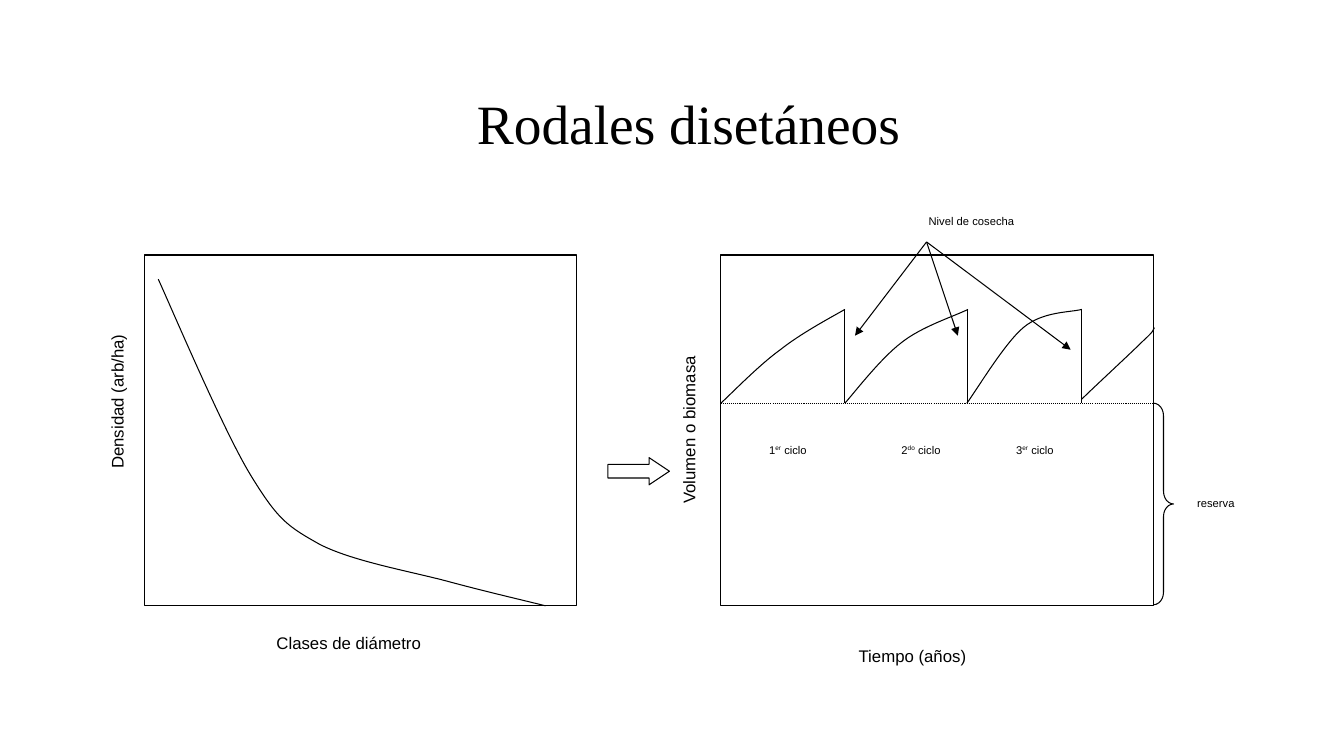
"""Build the slide on uneven-aged stands: diameter distribution and harvest cycles."""
from lxml import etree
from pptx import Presentation
from pptx import util as u
from pptx.dml.color import RGBColor
from pptx.enum import dml, shapes, text
from pptx.oxml.ns import qn

BLACK, WHITE = "000000", "FFFFFF"
PANEL_TOP, PANEL_WIDTH, PANEL_HEIGHT = 2.53, 4.29, 3.48
LEFT_PANEL, RIGHT_PANEL = 1.43, 7.15
PEAK, RESERVE = 3.07, 4.0


def draw_outline(shape, fill=None):
    """Give a shape or connector a thin black line and no shadow."""
    shape.line.color.rgb = RGBColor.from_string(BLACK)
    shape.line.width = u.Pt(0.75)
    if fill:
        shape.fill.solid()
        shape.fill.fore_color.rgb = RGBColor.from_string(fill)
    elif hasattr(shape, "fill"):
        shape.fill.background()
    etree.SubElement(shape._element.spPr, qn("a:effectLst"))
    return shape


def add_label(left, top, width, height, runs, size):
    """Add a centred label; each run is a pair of wording and baseline shift."""
    box = slide.shapes.add_textbox(
        u.Inches(left), u.Inches(top), u.Inches(width), u.Inches(height))
    frame = box.text_frame
    frame.word_wrap = False
    frame.auto_size = text.MSO_AUTO_SIZE.SHAPE_TO_FIT_TEXT
    frame.vertical_anchor = text.MSO_ANCHOR.MIDDLE
    paragraph = frame.paragraphs[0]
    paragraph.alignment = text.PP_ALIGN.CENTER
    for wording, baseline in runs:
        run = paragraph.add_run()
        run.text = wording
        run.font.size = u.Pt(size)
        run.font.name = "Arial"
        run.font.color.rgb = RGBColor.from_string(BLACK)
        if baseline:
            run.font._element.set("baseline", str(baseline))
    return box


presentation = Presentation()
presentation.slide_width = u.Inches(13.33)
presentation.slide_height = u.Inches(7.5)
slide = presentation.slides.add_slide(presentation.slide_layouts[5])

title = slide.shapes.title
title.left, title.top = u.Inches(1.08), u.Inches(0.87)
title.width, title.height = u.Inches(11.5), u.Inches(0.85)
title.text_frame.margin_bottom = u.Inches(0.13)
title.text_frame.vertical_anchor = text.MSO_ANCHOR.MIDDLE
paragraph = title.text_frame.paragraphs[0]
paragraph.alignment = text.PP_ALIGN.CENTER
paragraph.line_spacing = 0.9
run = paragraph.add_run()
run.text = "Rodales disetáneos"
run.font.size = u.Pt(39.6)
run.font.name = "Times New Roman"
run.font.color.rgb = RGBColor.from_string(BLACK)

for panel_left in (RIGHT_PANEL, LEFT_PANEL):
    draw_outline(slide.shapes.add_shape(
        shapes.MSO_SHAPE.RECTANGLE, u.Inches(panel_left), u.Inches(PANEL_TOP),
        u.Inches(PANEL_WIDTH), u.Inches(PANEL_HEIGHT)), WHITE)

density_curve = [
    (1.57, 2.77), (1.72, 3.1), (2.22, 4.28), (2.49, 4.72), (2.76, 5.16), (2.85, 5.22),
    (3.17, 5.4), (3.5, 5.57), (4.08, 5.67), (4.45, 5.77), (4.82, 5.87), (5.21, 5.96),
    (5.41, 6.01)]
growth_curves = [
    [(7.15, RESERVE), (7.25, 3.91), (7.53, 3.62), (7.74, 3.47), (7.94, 3.31),
     (8.24, 3.15), (8.38, PEAK)],
    [(8.38, RESERVE), (8.47, 3.9), (8.73, 3.56), (8.94, 3.4), (9.14, 3.24),
     (9.46, 3.14), (9.6, PEAK)],
    [(9.59, RESERVE), (9.68, 3.88), (9.96, 3.41), (10.15, 3.25), (10.34, 3.09),
     (10.61, 3.1), (10.73, PEAK)],
    [(10.73, 3.96), (10.83, 3.86), (11.22, 3.5), (11.34, 3.38), (11.46, 3.27),
     (11.43, 3.28), (11.45, 3.25)]]

for curve in [density_curve, *growth_curves]:
    points = [(u.Inches(x), u.Inches(y)) for x, y in curve]
    builder = slide.shapes.build_freeform(*points[0])
    builder.add_line_segments(points[1:], close=False)
    shape = draw_outline(builder.convert_to_shape())
    segments = list(shape._element.iter(qn("a:lnTo")))
    for first in range(0, len(segments), 3):
        bezier = etree.Element(qn("a:cubicBezTo"))
        segments[first].addprevious(bezier)
        for segment in segments[first:first + 3]:
            bezier.append(segment[0])
            segment.getparent().remove(segment)

reserve_line = [(RIGHT_PANEL, RESERVE, RIGHT_PANEL + PANEL_WIDTH, RESERVE, "dotted")]
harvest_drops = [(x, PEAK, x, RESERVE, "plain") for x in (8.38, 9.6, 10.73)]
harvest_arrows = [(9.19, 2.4, x, y, "arrow")
                  for x, y in ((8.48, 3.33), (9.5, 3.33), (10.62, 3.47))]
for x1, y1, x2, y2, style in reserve_line + harvest_drops + harvest_arrows:
    connector = draw_outline(slide.shapes.add_connector(
        shapes.MSO_CONNECTOR.STRAIGHT,
        u.Inches(x1), u.Inches(y1), u.Inches(x2), u.Inches(y2)))
    if style == "dotted":
        connector.line.dash_style = dml.MSO_LINE.ROUND_DOT
    elif style == "arrow":
        etree.SubElement(connector.line._get_or_add_ln(), qn("a:tailEnd"), type="triangle")

for kind, left, top, width, height, adjustments in (
        (shapes.MSO_SHAPE.RIGHT_ARROW, 6.03, 4.54, 0.61, 0.27, (0.5, 0.75)),
        (shapes.MSO_SHAPE.RIGHT_BRACE, RIGHT_PANEL + PANEL_WIDTH, RESERVE, 0.2, 2.0,
         (0.625, 0.5))):
    shape = draw_outline(slide.shapes.add_shape(
        kind, u.Inches(left), u.Inches(top), u.Inches(width), u.Inches(height)))
    for index, value in enumerate(adjustments):
        shape.adjustments[index] = value

for left, top, width, height, wording, size in (
        (2.46, 6.14, 2.0, 0.48, "Clases de diámetro", 12),
        (8.27, 6.27, 1.56, 0.48, "Tiempo (años)", 12),
        (8.99, 2.0, 1.29, 0.38, "Nivel de cosecha", 8),
        (11.71, 4.8, 0.7, 0.38, "reserva", 8)):
    add_label(left, top, width, height, [(wording, 0)], size)

density_label = add_label(0.96, 3.31, 0.4, 1.44, [("Densidad (arb/ha)", 0)], 12)
density_label.rotation = 180
density_label.text_frame._txBody.bodyPr.set("vert", "eaVert")
volume_label = add_label(5.49, 4.08, 2.68, 0.37, [("Volumen o biomasa", 0)], 12)
volume_label.rotation = 270

for left, width, number, ordinal in (
        (7.46, 0.71, "1", "er"), (8.77, 0.73, "2", "do"), (9.91, 0.71, "3", "er")):
    add_label(left, 4.27, width, 0.38, [(number, 0), (ordinal, 30000), (" ciclo", 0)], 8)

presentation.save("out.pptx")
